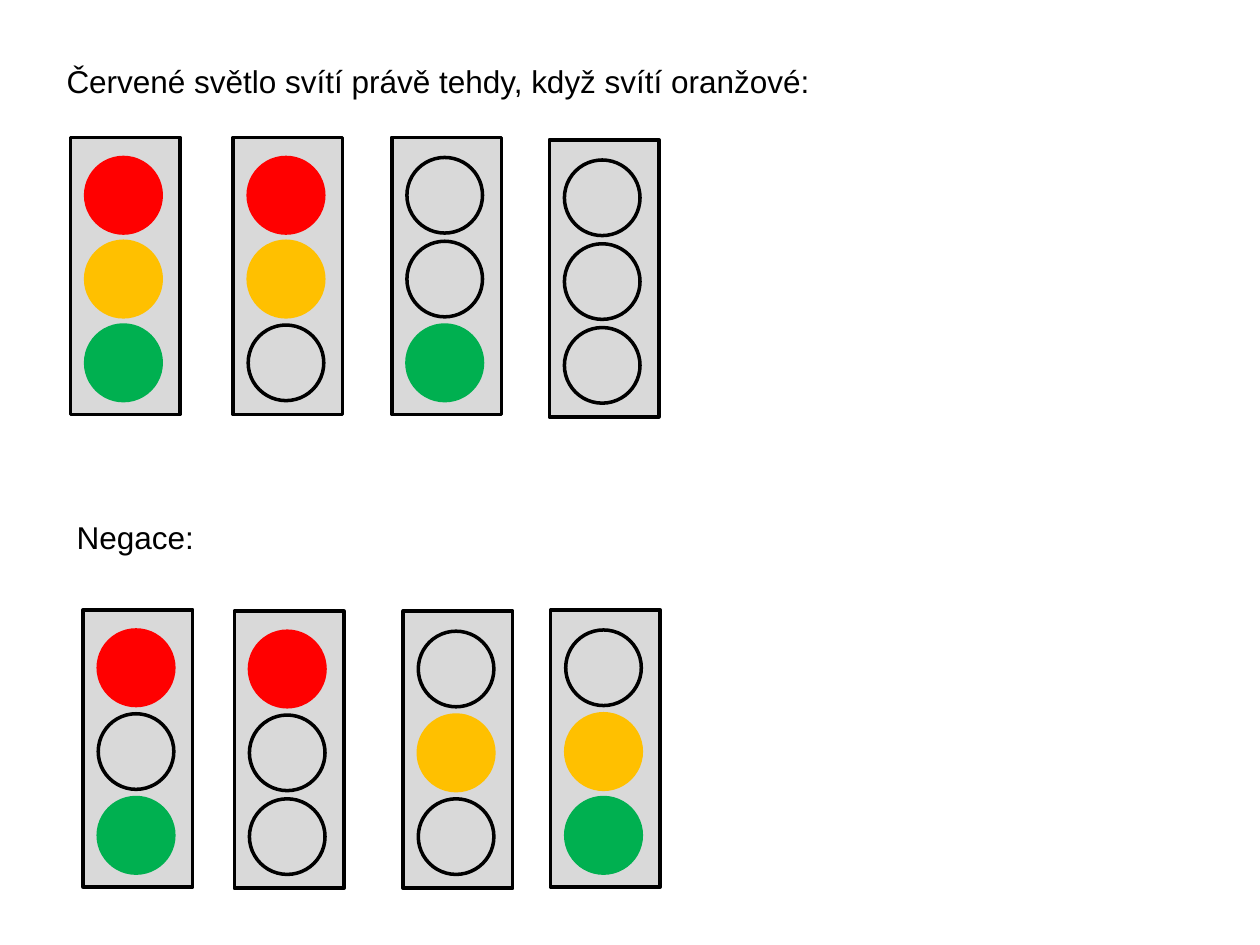
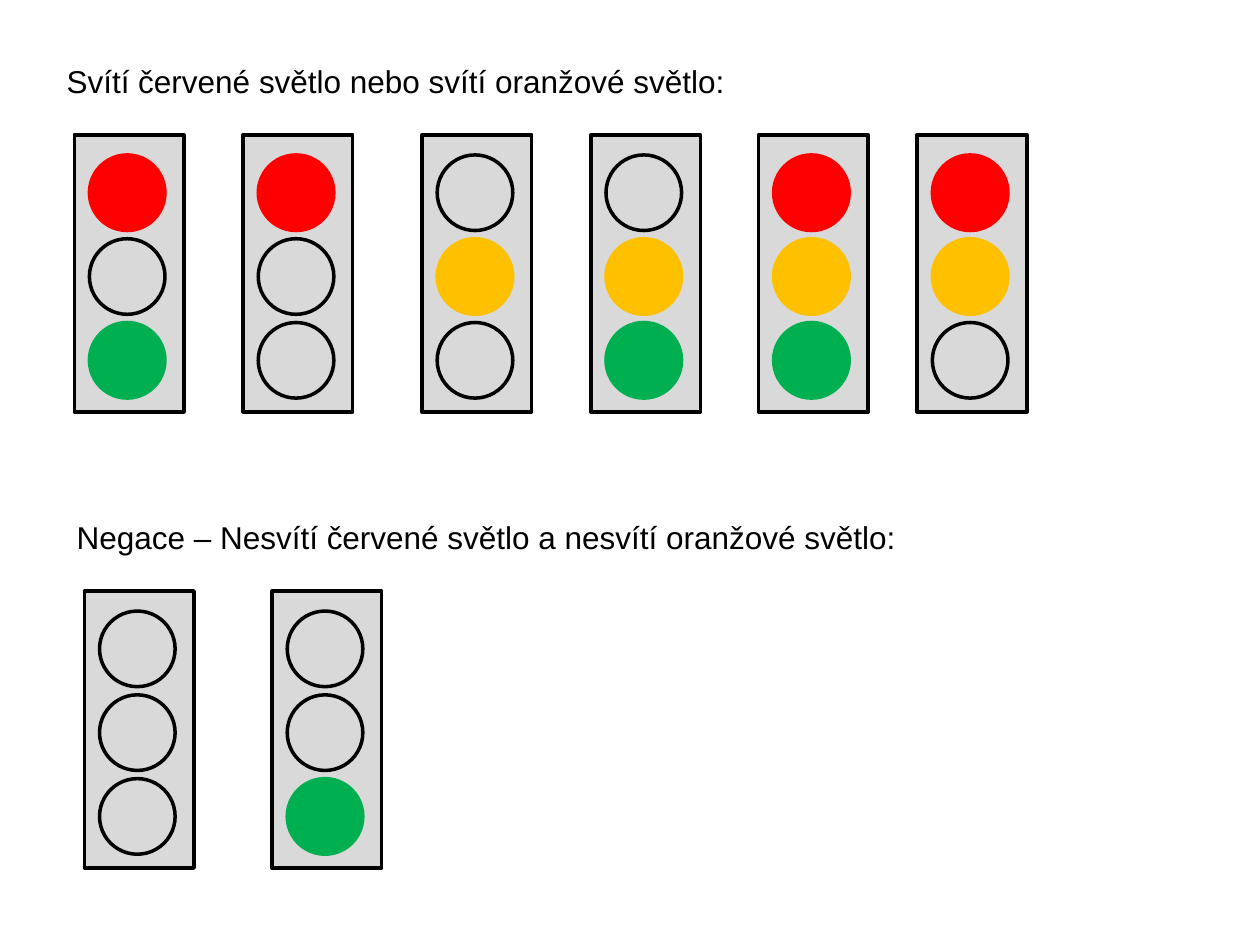
from pptx import Presentation
from pptx.dml.color import RGBColor
from pptx.enum.shapes import MSO_SHAPE
from pptx.enum.text import MSO_AUTO_SIZE
from pptx.util import Inches, Pt

BLACK, HOUSING = "000000", "D9D9D9"
LAMP_COLOURS = {"R": "FF0000", "O": "FFC000", "G": "00B050"}

HOUSING_WIDTH, HOUSING_HEIGHT = 0.87, 2.2
LAMP_SIZE, LAMP_LEFT = 0.6, 0.12
FIRST_LAMP_TOP, LAST_LAMP_TOP = 0.16, 1.49
LAMP_STEP = (LAST_LAMP_TOP - FIRST_LAMP_TOP) / 2

# Captions: (left, top, width, text).
# Traffic lights: (left, top, letters of the lamps that are on).
SLIDES = [
    {
        "captions": [
            (0.43, 0.44, 6.16, "Červené světlo svítí právě tehdy, když svítí oranžové:"),
            (0.51, 4.06, 1.13, "Negace:"),
        ],
        "lights": [
            (0.56, 1.09, "ROG"), (1.85, 1.09, "RO"),
            (3.11, 1.09, "G"), (4.36, 1.11, ""),
            (0.66, 4.84, "RG"), (1.86, 4.85, "R"),
            (3.2, 4.85, "O"), (4.37, 4.84, "OG"),
        ],
    },
    {
        "captions": [
            (0.43, 0.44, 5.48, "Svítí červené světlo nebo svítí oranžové světlo:"),
            (0.51, 4.06, 6.77, "Negace – Nesvítí červené světlo a nesvítí oranžové světlo:"),
        ],
        "lights": [
            (0.59, 1.07, "RG"), (1.93, 1.07, "R"), (3.35, 1.07, "O"),
            (4.69, 1.07, "OG"), (6.02, 1.07, "ROG"), (7.28, 1.07, "RO"),
            (0.67, 4.69, ""), (2.16, 4.69, "G"),
        ],
    },
]


def colour(hex_string):
    return RGBColor.from_string(hex_string)


class Page:
    font_name = "Arial"
    font_size = Pt(18)
    line_width = Pt(2)

    def __init__(self, deck):
        self.slide = deck.slides.add_slide(deck.slide_layouts[6])

    def caption(self, left, top, width, text):
        box = self.slide.shapes.add_textbox(
            Inches(left), Inches(top), Inches(width), Inches(0.4))
        frame = box.text_frame
        frame.word_wrap = False
        frame.auto_size = MSO_AUTO_SIZE.SHAPE_TO_FIT_TEXT
        paragraph = frame.paragraphs[0]
        paragraph.text = text
        paragraph.font.name = self.font_name
        paragraph.font.size = self.font_size
        paragraph.font.color.rgb = colour(BLACK)

    def outlined(self, group, kind, left, top, width, height, fill, line):
        """Add a shape to the group; a fill of None leaves it hollow."""
        shape = group.shapes.add_shape(
            kind, Inches(left), Inches(top), Inches(width), Inches(height))
        shape.shadow.inherit = False
        if fill:
            shape.fill.solid()
            shape.fill.fore_color.rgb = colour(fill)
        else:
            shape.fill.background()
        shape.line.color.rgb = colour(line)
        shape.line.width = self.line_width

    def traffic_light(self, left, top, lit):
        group = self.slide.shapes.add_group_shape()
        self.outlined(group, MSO_SHAPE.RECTANGLE, left, top,
                      HOUSING_WIDTH, HOUSING_HEIGHT, HOUSING, BLACK)
        for row, (letter, lamp_colour) in enumerate(LAMP_COLOURS.items()):
            fill = lamp_colour if letter in lit else None
            lamp_top = top + FIRST_LAMP_TOP + row * LAMP_STEP
            self.outlined(group, MSO_SHAPE.OVAL, left + LAMP_LEFT, lamp_top,
                          LAMP_SIZE, LAMP_SIZE, fill, fill or BLACK)


def main():
    deck = Presentation()
    deck.slide_width, deck.slide_height = Inches(10), Inches(7.5)
    for content in SLIDES:
        page = Page(deck)
        for caption in content["captions"]:
            page.caption(*caption)
        for light in content["lights"]:
            page.traffic_light(*light)
    deck.save("out.pptx")


if __name__ == "__main__":
    main()
